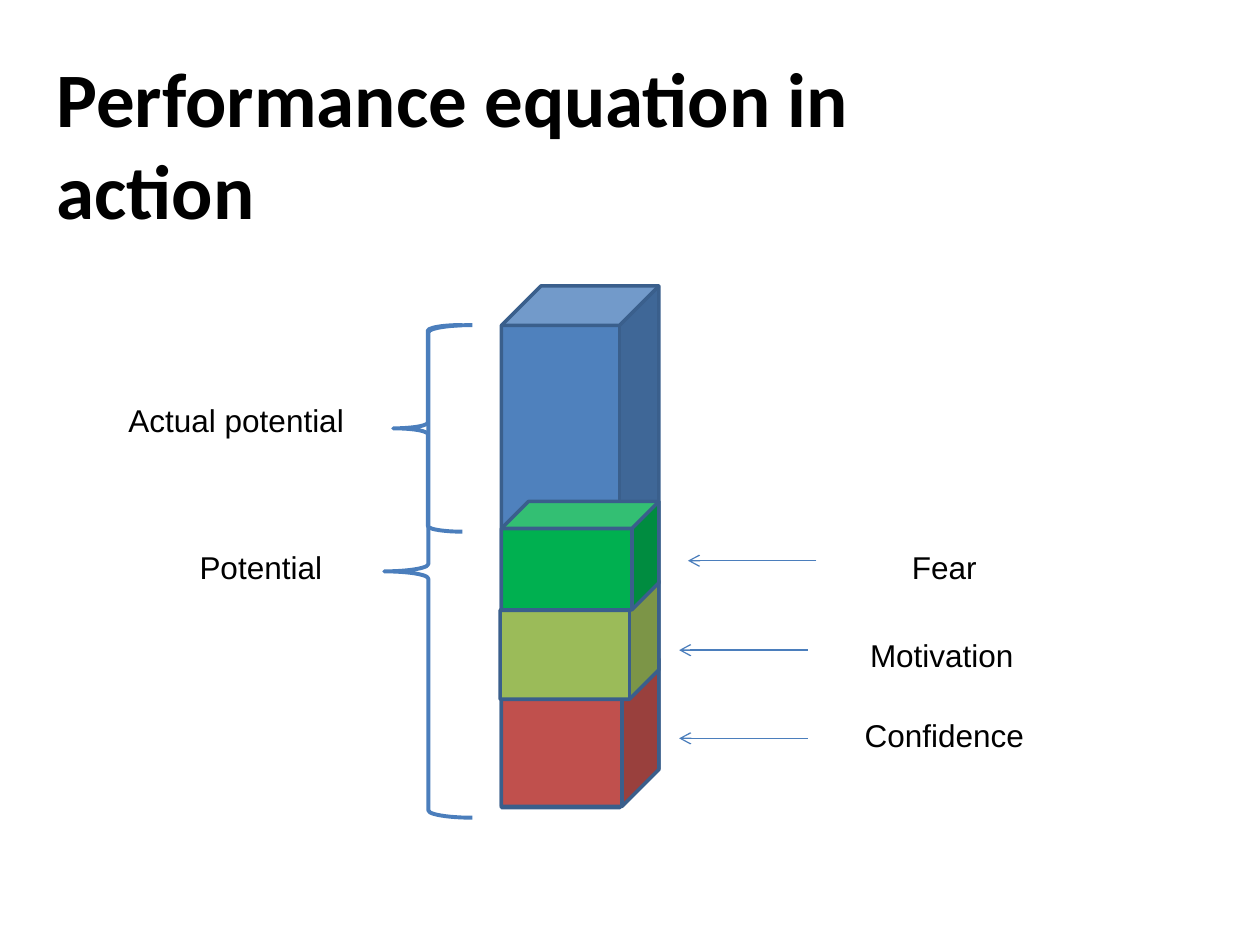
from lxml.etree import SubElement
from pptx import Presentation
from pptx.dml.color import RGBColor
from pptx.enum.shapes import MSO_CONNECTOR, MSO_SHAPE
from pptx.enum.text import MSO_ANCHOR, PP_ALIGN
from pptx.oxml.ns import qn
from pptx.util import Inches, Pt

# Grid of 100 columns by 75 rows on a 10 x 7.5 inch slide
COLUMNS, ROWS = 100, 75
SLIDE_WIDTH, SLIDE_HEIGHT = Inches(10), Inches(7.5)

COLORS = {
    "text": "000000",
    "edge": "3A5F8C",
    "accent": "4B7EBC",
    "actual": "4F81BD",
    "confidence": "C0504D",
    "motivation": "9BBB59",
    "fear": "00B050",
}
TITLE_FONT = {"name": "Calibri", "size": Pt(44), "bold": True}
LABEL_FONT = {"name": "Arial", "size": Pt(18)}
LABEL_HEIGHT = 4
ARROW_LENGTH = 10.2

# Cube colour, cube box, arrow start, label, label left and top
FACTORS = [
    ("confidence", (39.8, 52.3, 12.5, 11.7), (64.1, 58.6), "Confidence", (65.6, 56.3)),
    ("motivation", (39.7, 46.1, 12.6, 9.4), (64.1, 51.6), "Motivation", (65.4, 50)),
    ("fear", (39.8, 39.8, 12.5, 8.6), (64.8, 44.5), "Fear", (65.6, 43)),
]
# Brace box, label, label box
RANGES = [
    ((30.5, 25.8, 7, 39.1), "Potential", (12.5, 43, 16.4, LABEL_HEIGHT)),
    ((31.2, 25.8, 5.5, 16.4), "Actual potential", (8.6, 31.3, 20.3, LABEL_HEIGHT)),
]


def x(column):
    return round(SLIDE_WIDTH * column / COLUMNS)


def y(row):
    return round(SLIDE_HEIGHT * row / ROWS)


def place(box):
    left, top, width, height = box
    return x(left), y(top), x(width), y(height)


def color(name):
    return RGBColor.from_string(COLORS[name])


def draw_line(line, name, points):
    line.color.rgb = color(name)
    line.width = Pt(points)


def add_text(slide, text, box, font_format, align):
    frame = slide.shapes.add_textbox(*place(box)).text_frame
    frame.word_wrap = True
    frame.vertical_anchor = MSO_ANCHOR.TOP
    paragraph = frame.paragraphs[0]
    paragraph.text = text
    paragraph.alignment = align
    for run in paragraph.runs:
        for attribute, value in font_format.items():
            setattr(run.font, attribute, value)
        run.font.color.rgb = color("text")


def add_cube(slide, name, box):
    cube = slide.shapes.add_shape(MSO_SHAPE.CUBE, *place(box))
    cube.shadow.inherit = False
    cube.fill.solid()
    cube.fill.fore_color.rgb = color(name)
    draw_line(cube.line, "edge", 2)


def add_brace(slide, box):
    brace = slide.shapes.add_shape(MSO_SHAPE.LEFT_BRACE, *place(box))
    brace.shadow.inherit = False
    brace.fill.background()
    draw_line(brace.line, "accent", 2.25)


def add_left_arrow(slide, start):
    column, row = start
    arrow = slide.shapes.add_connector(
        MSO_CONNECTOR.STRAIGHT, x(column), y(row), x(column - ARROW_LENGTH), y(row))
    draw_line(arrow.line, "accent", 0.75)
    properties = arrow.element.spPr
    SubElement(properties.find(qn("a:ln")), qn("a:tailEnd"), type="arrow")
    SubElement(properties, qn("a:effectLst"))


def main():
    deck = Presentation()
    deck.slide_width, deck.slide_height = SLIDE_WIDTH, SLIDE_HEIGHT
    slide = deck.slides.add_slide(deck.slide_layouts[6])

    # Title
    add_text(slide, "Performance equation in \vaction", (3.5, 3.5, 88.8, 5.6),
             TITLE_FONT, PP_ALIGN.LEFT)

    # Column of stacked cubes, each factor with its arrow and label
    add_cube(slide, "actual", (39.8, 22.7, 12.5, 41.4))
    for name, cube_box, arrow_start, label, corner in FACTORS:
        add_cube(slide, name, cube_box)
        add_left_arrow(slide, arrow_start)
        add_text(slide, label, (*corner, 18.7, LABEL_HEIGHT), LABEL_FONT, PP_ALIGN.CENTER)

    # Braces over the two ranges
    for brace_box, label, label_box in RANGES:
        add_brace(slide, brace_box)
        add_text(slide, label, label_box, LABEL_FONT, PP_ALIGN.CENTER)

    deck.save("out.pptx")


if __name__ == "__main__":
    main()
